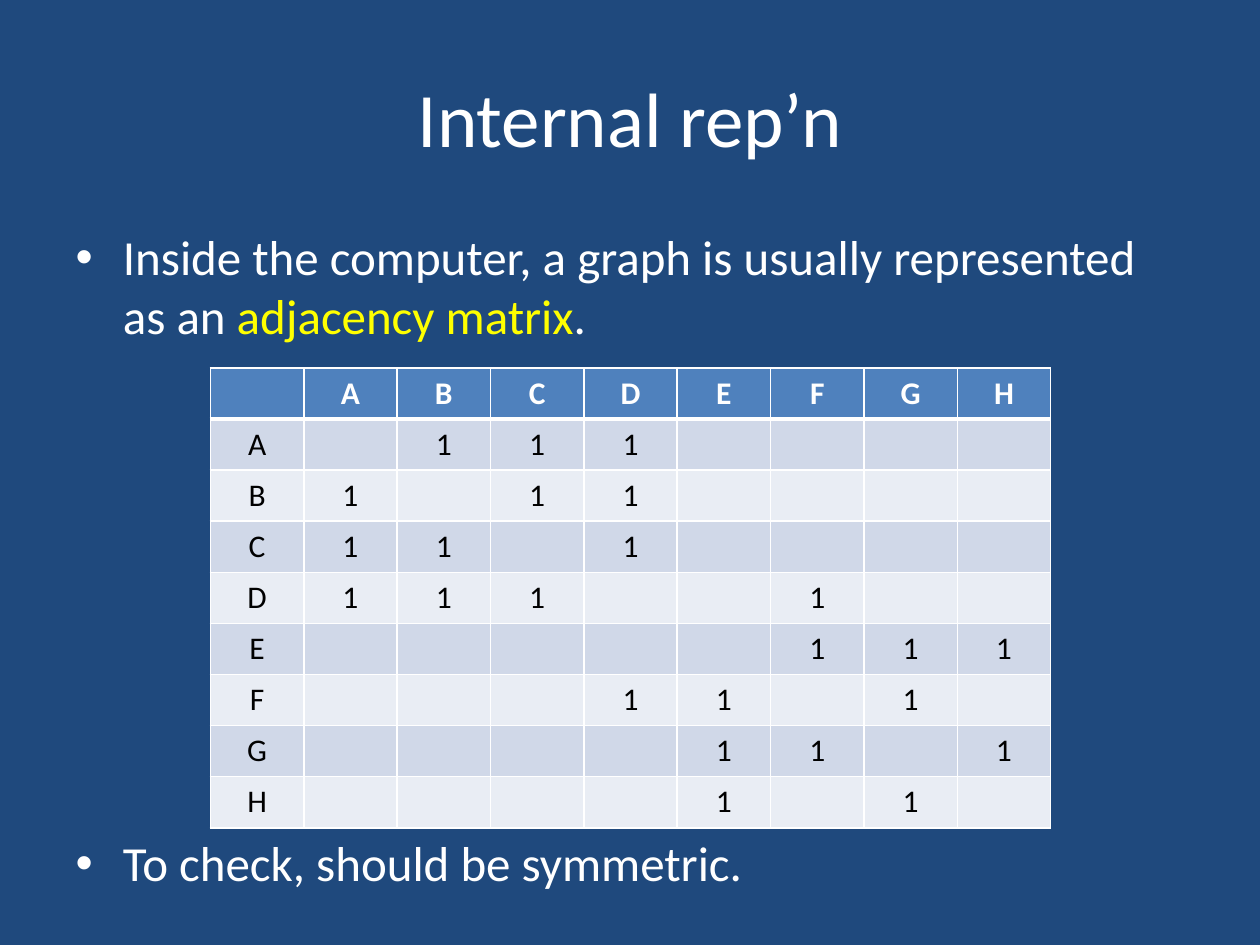
from dataclasses import dataclass

from lxml import etree
from pptx import Presentation
from pptx import util as u
from pptx.dml.color import RGBColor
from pptx.enum import text
from pptx.oxml.ns import qn


@dataclass(frozen=True)
class Theme:
    font: str = "Calibri"
    back: str = "1F497D"
    white: str = "FFFFFF"
    black: str = "000000"
    key: str = "FFFF00"
    head: str = "4F81BD"
    bands: tuple = ("D0D8E8", "E9EDF4")
    title: int = 44
    body: int = 28
    cell: int = 18


class Deck:
    """Holds the theme and the current slide."""

    def __init__(self, theme):
        self.theme = theme
        self.prs = Presentation()
        self.prs.slide_width = u.Inches(10)
        self.prs.slide_height = u.Inches(7.5)
        self.slide = self.prs.slides.add_slide(self.prs.slide_layouts[1])
        fill = self.slide.background.fill
        fill.solid()
        fill.fore_color.rgb = RGBColor.from_string(theme.back)

    def place(self, shape, left, top, width, height):
        box = dict(left=left, top=top, width=width, height=height)
        for name, value in box.items():
            setattr(shape, name, u.Inches(value))

    def run(self, para, words, size, color, bold=False):
        run = para.add_run()
        run.text = words
        style = dict(name=self.theme.font, size=u.Pt(size), bold=bold)
        for name, value in style.items():
            setattr(run.font, name, value)
        run.font.color.rgb = RGBColor.from_string(color)

    def title(self, words, *box):
        shape = self.slide.shapes.title
        self.place(shape, *box)
        frame = shape.text_frame
        frame.vertical_anchor = text.MSO_ANCHOR.MIDDLE
        para = frame.paragraphs[0]
        para.alignment = text.PP_ALIGN.CENTER
        self.run(para, words, self.theme.title, self.theme.white)

    def bullets(self, items, *box):
        """Each item is (space before or None, [(words, color), ...])."""
        shape = self.slide.placeholders[1]
        self.place(shape, *box)
        frame = shape.text_frame
        frame.auto_size = text.MSO_AUTO_SIZE.NONE
        for i, (space, parts) in enumerate(items):
            para = frame.add_paragraph() if i else frame.paragraphs[0]
            if space is not None:
                para.space_before = u.Pt(space)
            for words, color in parts:
                self.run(para, words, self.theme.body, color)

    def border(self, cell, sides):
        props = cell._tc.get_or_add_tcPr()
        for i, (side, width) in enumerate(sides.items()):
            line = etree.Element(qn("a:ln" + side), w=str(u.Pt(width)))
            fill = etree.SubElement(line, qn("a:solidFill"))
            etree.SubElement(fill, qn("a:srgbClr"), val=self.theme.white)
            props.insert(i, line)

    def cell(self, cell, words, fill, color, bold, sides):
        cell.fill.solid()
        cell.fill.fore_color.rgb = RGBColor.from_string(fill)
        self.border(cell, sides)
        para = cell.text_frame.paragraphs[0]
        para.alignment = text.PP_ALIGN.CENTER
        para.font.size = u.Pt(self.theme.cell)
        if words:
            self.run(para, words, self.theme.cell, color, bold)

    def matrix(self, nodes, edges, *box):
        """Draw the adjacency matrix of an undirected graph."""
        t = self.theme
        links = set(edges) | {e[::-1] for e in edges}
        rows = [["", *nodes]]
        for a in nodes:
            rows.append([a] + ["1" if a + b in links else "" for b in nodes])
        count = len(rows)
        table = self.slide.shapes.add_table(
            count, count, *(u.Inches(v) for v in box)).table
        for r, row in enumerate(rows):
            top = r == 0
            fill = t.head if top else t.bands[(r - 1) % 2]
            color = t.white if top else t.black
            sides = dict(L=1, R=1, T=3 if r == 1 else 1, B=3 if top else 1)
            for c, words in enumerate(row):
                self.cell(table.cell(r, c), words, fill, color, top, sides)


def main():
    theme = Theme()
    deck = Deck(theme)

    # Title
    deck.title("Internal rep’n", 0.5, 0.3, 9, 1.25)

    # Bullets above and below the matrix
    deck.bullets([
        (None, [("Inside the computer, a graph is usually represented as an ",
                 theme.white),
                ("adjacency matrix", theme.key),
                (".", theme.white)]),
        (279, [("To check, should be symmetric.", theme.white)]),
    ], 0.5, 1.75, 9, 5.75)

    # Adjacency matrix
    edges = "AB AC AD BC BD CD DF EF EG EH FG GH".split()
    deck.matrix("ABCDEFGH", edges, 1.67, 2.92, 6.67, 3.65)

    deck.prs.save("out.pptx")


if __name__ == "__main__":
    main()
